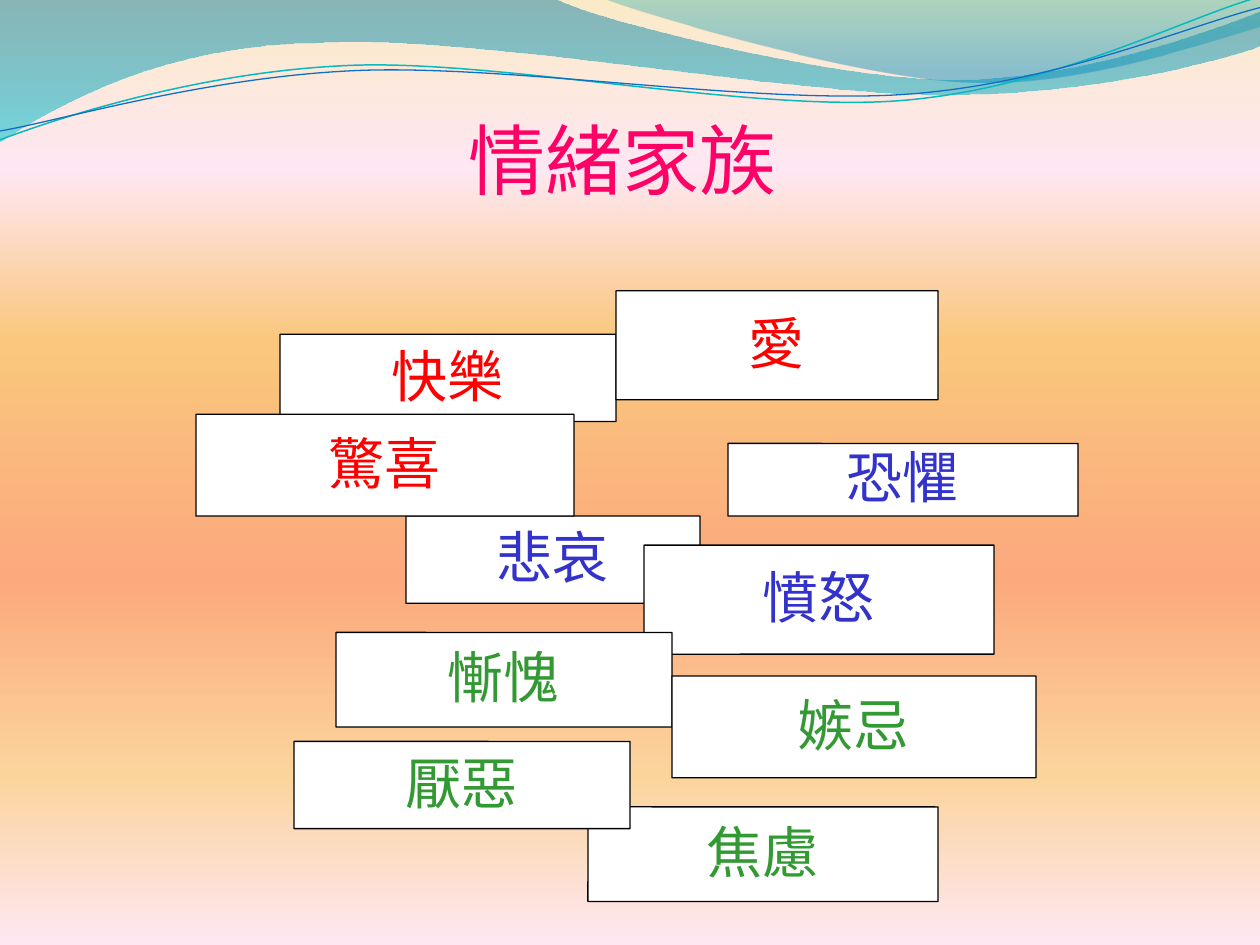
import math

from lxml import etree
from pptx import Presentation
from pptx.dml.color import RGBColor
from pptx.enum import shapes, text
from pptx.oxml.ns import qn
from pptx.util import Inches, Pt

FONT = "Times New Roman"
PINK = RGBColor(0xFF, 0x00, 0x66)
RED = RGBColor(0xFF, 0x00, 0x00)
BLUE = RGBColor(0x33, 0x33, 0xCC)
GREEN = RGBColor(0x33, 0x99, 0x33)
WHITE = RGBColor(0xFF, 0xFF, 0xFF)
BLACK = RGBColor(0x00, 0x00, 0x00)
TEAL_LINE = RGBColor(0x0A, 0xB8, 0xBF)
BLUE_LINE = RGBColor(0x0F, 0x6F, 0xC6)

# Gradient stops: position %, colour, opacity %
SKY = [(0, RGBColor(0xFB, 0xEA, 0xC7), 100), (18, RGBColor(0xFE, 0xE7, 0xF2), 100),
       (36, RGBColor(0xFA, 0xC7, 0x7D), 100), (61, RGBColor(0xFB, 0xA9, 0x7D), 100),
       (82, RGBColor(0xFB, 0xD4, 0x9C), 100), (100, RGBColor(0xFE, 0xE7, 0xF2), 100)]
DEEP_WAVE = [(0, RGBColor(0x00, 0x74, 0xA1), 45), (100, RGBColor(0x00, 0xC6, 0xCF), 55)]
LIGHT_WAVE = [(0, RGBColor(0x00, 0xA1, 0xA9), 30), (80, RGBColor(0x00, 0x8B, 0xBF), 45)]

# Outlines: a pair is a straight step, six numbers are a Bezier curve
DEEP_BOX = (-0.01, -0.01, 10.02, 1.14)
DEEP_OUTLINE = [(0, -0.01), (4.4, -0.01), (4.76, 0.17, 6.64, 0.63, 7.58, 0.63),
                (8.53, 0.63, 9.58, 0.26, 10, 0.09), (10.01, 0.36),
                (9.83, 0.44, 8.7, 0.76, 7.46, 0.75), (6.22, 0.75, 3.82, 0.28, 2.57, 0.34),
                (1.29, 0.35, 0.46, 0.83, -0.01, 1.13), (0, -0.01)]
LIGHT_BOX = (4.79, -0.01, 5.21, 0.7)
LIGHT_OUTLINE = [(4.79, -0.01), (5.09, 0.11, 6.82, 0.62, 7.69, 0.65),
                 (8.56, 0.69, 9.61, 0.32, 10, 0.21), (10, 0), (4.79, -0.01)]
TEAL_BOX = (-0.02, 0.22, 10.02, 0.71)
TEAL_CURVE = [(0, 1.11), (0.48, 0.93, 1.58, 0.57, 2.77, 0.52),
              (3.95, 0.47, 5.93, 0.89, 7.13, 0.8), (8.33, 0.71, 9.38, 0.15, 9.98, -0.02)]
BLUE_BOX = (-0.02, 0.3, 10.03, 0.58)
BLUE_CURVE = [(0, 1.04), (0.47, 0.96, 1.64, 0.61, 2.83, 0.56),
              (4.03, 0.51, 5.97, 0.83, 7.17, 0.75), (8.36, 0.67, 9.41, 0.21, 10, 0.06)]
CURVE_TILT = -2.7

# Title and cards sit on a grid of 90 columns by 65 rows
COLUMN, ROW = 10 / 90, 7.5 / 65
TITLE_CELL = (8, 5.5, 73, 11.5)

# Emotion cards, back to front: word, colour, column, row, columns, rows
CARDS = [("快樂", RED, 20, 23, 24, 6), ("悲哀", BLUE, 29, 35.5, 21, 6),
         ("憤怒", BLUE, 46, 37.5, 25, 7.5), ("恐懼", BLUE, 52, 30.5, 25, 5),
         ("焦慮", GREEN, 42, 55.5, 25, 6.5), ("厭惡", GREEN, 21, 51, 24, 6),
         ("慚愧", GREEN, 24, 43.5, 24, 6.5), ("嫉忌", GREEN, 48, 46.5, 26, 7),
         ("驚喜", RED, 14, 28.5, 27, 7), ("愛", RED, 44, 20, 23, 7.5)]


def set_attrs(obj, values):
    for name, value in values.items():
        setattr(obj, name, value)


def set_gradient(fill, element, stops):
    """Vertical gradient, first stop at the top."""
    fill.gradient()
    fill.gradient_angle = 270
    gs_list = element.find(".//" + qn("a:gsLst"))
    for gs in list(gs_list):
        gs_list.remove(gs)
    for position, color, opacity in stops:
        gs = etree.SubElement(gs_list, qn("a:gs"), pos=str(position * 1000))
        clr = etree.SubElement(gs, qn("a:srgbClr"), val=str(color))
        if opacity < 100:
            etree.SubElement(clr, qn("a:alpha"), val=str(opacity * 1000))


def local_point(x, y, box, tilt):
    """Slide point as an offset in the box before the box is tilted."""
    left, top, width, height = box
    dx, dy = x - left - width / 2, y - top - height / 2
    cos, sin = math.cos(math.radians(tilt)), math.sin(math.radians(tilt))
    return (Inches(dx * cos + dy * sin + width / 2),
            Inches(dy * cos - dx * sin + height / 2))


def add_outline(parent, outline, box, tilt=0, close=False):
    """Freeform filling the box, with its steps written as lines and curves."""
    left, top, width, height = map(Inches, box)
    builder = parent.shapes.build_freeform(left, top)
    builder.add_line_segments([(left + width, top + height)], close=False)
    sp = builder.convert_to_shape()
    sp.shadow.inherit = False
    sp.rotation = tilt
    outline_path = sp.element.find(".//" + qn("a:path"))
    for step in list(outline_path):
        outline_path.remove(step)
    for i, step in enumerate(outline):
        tag = "a:moveTo" if i == 0 else "a:lnTo" if len(step) == 2 else "a:cubicBezTo"
        node = etree.SubElement(outline_path, qn(tag))
        for x, y in zip(step[::2], step[1::2]):
            px, py = local_point(x, y, box, tilt)
            etree.SubElement(node, qn("a:pt"), x=str(px), y=str(py))
    if close:
        etree.SubElement(outline_path, qn("a:close"))
    return sp


def add_wave(s, outline, box, stops):
    sp = add_outline(s, outline, box, close=True)
    set_gradient(sp.fill, sp.element, stops)
    sp.line.fill.background()


def add_curve(parent, outline, box, color, width):
    sp = add_outline(parent, outline, box, CURVE_TILT)
    sp.fill.background()
    sp.line.color.rgb = color
    sp.line.width = Pt(width)


def add_box(parent, cell):
    column, row, columns, rows = cell
    box = (column * COLUMN, row * ROW, columns * COLUMN, rows * ROW)
    sp = parent.shapes.add_shape(shapes.MSO_SHAPE.ROUNDED_RECTANGLE, *map(Inches, box))
    sp.adjustments[0] = 0.002
    sp.shadow.inherit = False
    return sp


def add_label(parent, words, color, size, cell):
    sp = add_box(parent, cell)
    sp.fill.background()
    sp.line.fill.background()
    tf = sp.text_frame
    set_attrs(tf, {"word_wrap": True, "vertical_anchor": text.MSO_ANCHOR.MIDDLE})
    p = tf.paragraphs[0]
    set_attrs(p, {"alignment": text.PP_ALIGN.CENTER, "line_spacing": 0.95})
    r = p.add_run()
    r.text = words
    set_attrs(r.font, {"name": FONT, "size": Pt(size)})
    r.font.color.rgb = color


def add_card(s, words, color, *cell):
    """White panel grouped with its label."""
    group = s.shapes.add_group_shape()
    panel = add_box(group, cell)
    panel.fill.solid()
    panel.fill.fore_color.rgb = WHITE
    panel.line.color.rgb = BLACK
    panel.line.width = Pt(0.75)
    add_label(group, words, color, 32, cell)


def main():
    prs = Presentation()
    set_attrs(prs, {"slide_width": Inches(10), "slide_height": Inches(7.5)})
    s = prs.slides.add_slide(prs.slide_layouts[6])

    # Background and waves
    set_gradient(s.background.fill, s.element, SKY)
    add_wave(s, DEEP_OUTLINE, DEEP_BOX, DEEP_WAVE)
    add_wave(s, LIGHT_OUTLINE, LIGHT_BOX, LIGHT_WAVE)
    curves = s.shapes.add_group_shape()
    add_curve(curves, TEAL_CURVE, TEAL_BOX, TEAL_LINE, 0.85)
    add_curve(curves, BLUE_CURVE, BLUE_BOX, BLUE_LINE, 0.75)

    # Title
    add_label(s, "情緒家族", PINK, 44, TITLE_CELL)

    # Emotion cards
    for card in CARDS:
        add_card(s, *card)

    prs.save("out.pptx")


if __name__ == "__main__":
    main()
